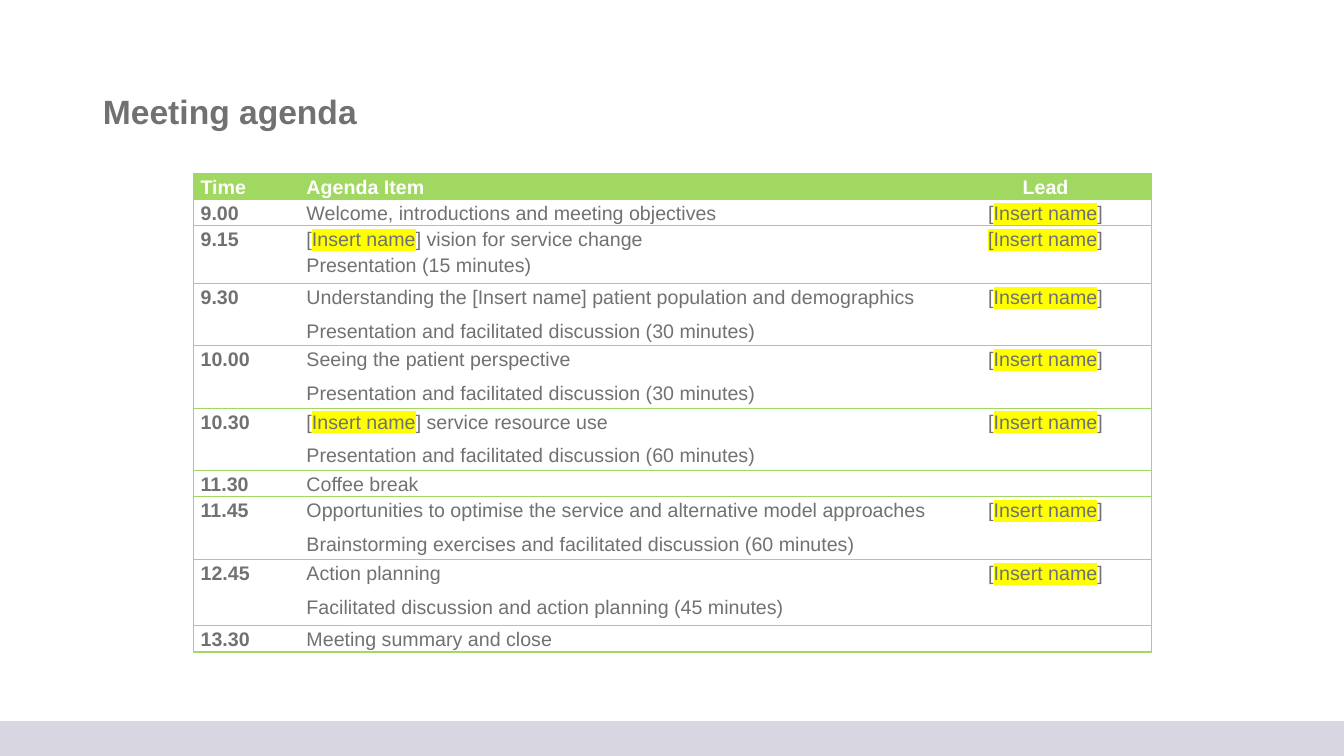
from copy import deepcopy
from pptx import Presentation
from pptx.dml.color import RGBColor
from pptx.enum.shapes import MSO_SHAPE as Shape
from pptx.enum.text import MSO_ANCHOR as Anchor, PP_ALIGN as Align
from pptx.oxml import parse_xml
from pptx.util import Emu, Pt

PX = 9144  # 100 px to the inch
NS = 'xmlns:a="http://schemas.openxmlformats.org/drawingml/2006/main"'
GREEN, GREY, WHITE, MARK, LILAC = "A1D862", "707173", "FFFFFF", "FFFF00", "D8D7E1"

LEAD = "[*Insert name*]"
TALK = "Presentation and facilitated discussion "
# Text between asterisks is highlighted; "\n" breaks a line; each item lists its paragraphs.
AGENDA = [
    ("Time", ["Agenda Item"], "Lead", 26),
    ("9.00", ["Welcome, introductions and meeting objectives"], LEAD, 26),
    ("9.15", ["[*Insert name*] vision for service change\nPresentation (15 minutes)"],
     "*[Insert name*]", 57),
    ("9.30", ["Understanding the [Insert name] patient population and demographics",
              TALK + "(30 minutes)"], LEAD, 62),
    ("10.00", ["Seeing the patient perspective", TALK + "(30 minutes)"], LEAD, 62),
    ("10.30", ["[*Insert name*] service resource use", TALK + "(60 minutes)"], LEAD, 62),
    ("11.30", ["Coffee break"], "", 26),
    ("11.45", ["Opportunities to optimise the service and alternative model approaches",
               "Brainstorming exercises and facilitated discussion (60 minutes)"], LEAD, 62),
    ("12.45", ["Action planning", "Facilitated discussion and action planning (45 minutes)"],
     LEAD, 66),
    ("13.30", ["Meeting summary and close"], "", 26),
]
COLS = (105, 635, 210)


def px(*nums):
    return [Emu(n * PX) for n in nums]


def rgb(code):
    return RGBColor.from_string(code)


def add_run(para, text, size, color, bold, mark):
    run = para.add_run()
    run.text = text
    font = run.font
    font.name, font.size, font.bold = "Arial", Pt(size), bold
    font.color.rgb = rgb(color)
    if mark:
        fill = font._element.find("{*}solidFill")
        fill.addnext(parse_xml(f'<a:highlight {NS}><a:srgbClr val="{MARK}"/></a:highlight>'))
    return run


def write(frame, paras, size=14, color=GREY, bold=False, align=Align.LEFT, lead=1.15, before=6):
    """Fill a text frame with paragraphs, highlighting text between asterisks."""
    for i, text in enumerate(paras):
        para = frame.add_paragraph() if i else frame.paragraphs[0]
        para.alignment, para.line_spacing, para.space_before = align, lead, Pt(before)
        if not text:
            para._p.get_or_add_endParaRPr().set("sz", str(size * 100))
        for j, part in enumerate(text.split("*")):
            for k, line in enumerate(part.split("\n")):
                if k:
                    para.add_line_break()
                    para._p[-1].append(deepcopy(run.font._element))
                if line:
                    run = add_run(para, line, size, color, bold, j % 2)


def edge(cell, sides):
    """Draw green borders on the named sides and none on the others."""
    props = cell._tc.get_or_add_tcPr()
    paint = f'<a:solidFill><a:srgbClr val="{GREEN}"/></a:solidFill>'
    for side in "LRTB":
        body = paint if side in sides else "<a:noFill/>"
        props.append(parse_xml(f'<a:ln{side} {NS} w="12700">{body}</a:ln{side}>'))


def add_title(slide, box, text):
    title = slide.shapes.title
    title.left, title.top, title.width, title.height = px(*box)
    title.text_frame.vertical_anchor = Anchor.MIDDLE
    write(title.text_frame, [text], size=24, bold=True, lead=0.9, before=0)


def add_band(slide, box):
    band = slide.shapes.add_shape(Shape.RECTANGLE, *px(*box))
    band.shadow.inherit = False
    band.fill.solid()
    band.fill.fore_color.rgb = band.line.color.rgb = rgb(LILAC)
    band.line.width = Pt(1)


def add_agenda(slide, left, top):
    size = px(left, top, sum(COLS), sum(row[-1] for row in AGENDA))
    table = slide.shapes.add_table(len(AGENDA), len(COLS), *size).table
    table.horz_banding = False
    for col, width in zip(table.columns, px(*COLS)):
        col.width = width
    for r, (time, item, lead, height) in enumerate(AGENDA):
        table.rows[r].height = px(height)[0]
        for c, paras in enumerate(([time], item, [lead])):
            cell = table.cell(r, c)
            cell.margin_left = cell.margin_right = px(7)[0]
            cell.margin_top = cell.margin_bottom = 0
            edge(cell, ("LTB", "TB", "RTB")[c])
            cell.fill.solid()
            cell.fill.fore_color.rgb = rgb(WHITE if r else GREEN)
            write(cell.text_frame, paras, color=GREY if r else WHITE,
                  bold=r == 0 or c == 0, align=Align.CENTER if c == 2 else Align.LEFT)


def main():
    deck = Presentation()
    deck.slide_width, deck.slide_height = px(1333, 750)
    slide = deck.slides.add_slide(deck.slide_layouts[5])
    add_band(slide, (0, 716, 1333, 34))
    add_title(slide, (92, 40, 1150, 145), "Meeting agenda")
    add_agenda(slide, 192, 172)
    deck.save("out.pptx")


if __name__ == "__main__":
    main()
